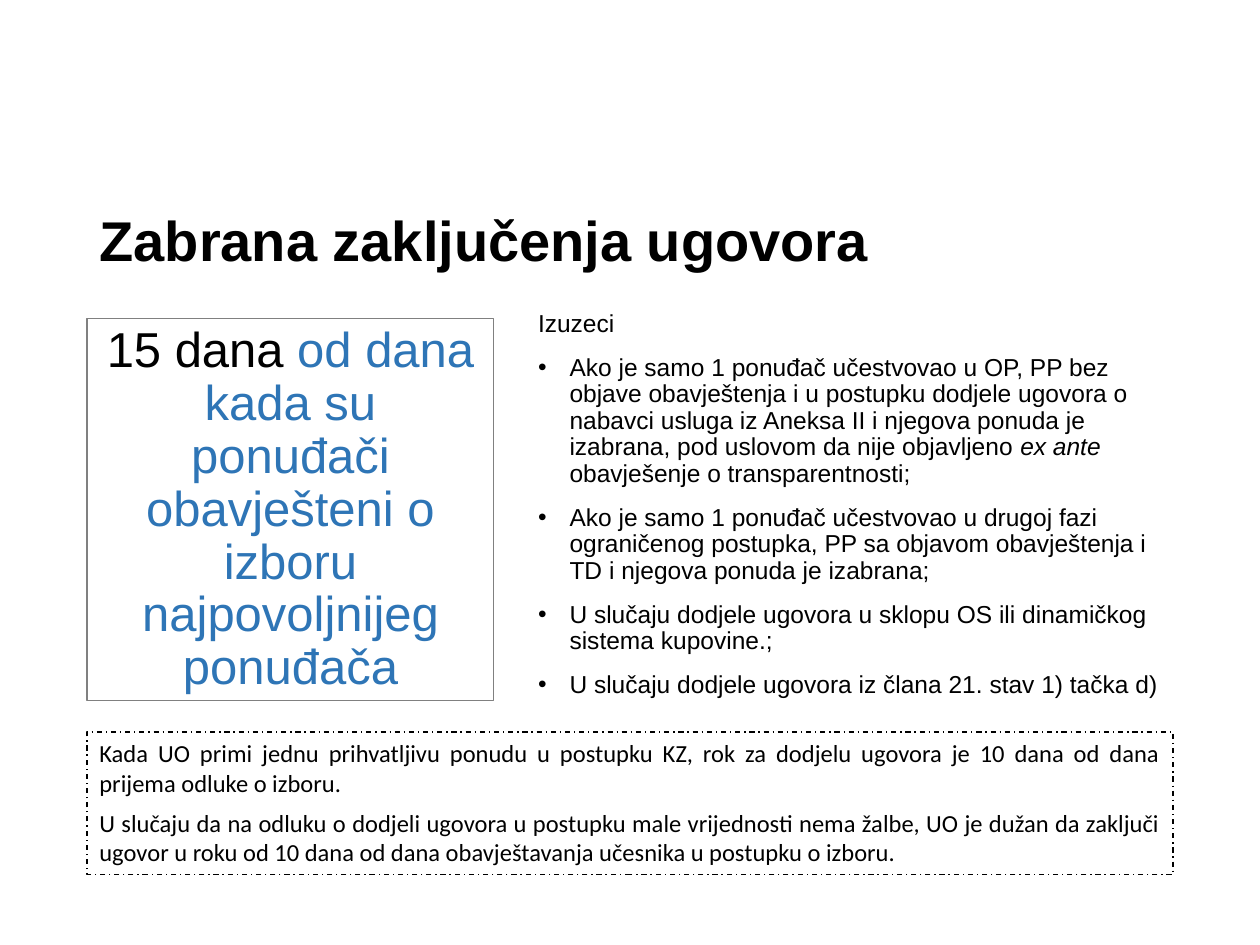
"""Build the slide on the ban on concluding a contract."""
from dataclasses import dataclass
from typing import Any, Optional

from lxml import etree
from pptx import Presentation, util as u
from pptx.dml.color import RGBColor
from pptx.enum import dml, shapes, text
from pptx.oxml.ns import qn


@dataclass(frozen=True)
class Theme:
    """Colours, fonts and type sizes."""
    ink: str = "000000"
    blue: str = "2E75B6"
    gray: str = "808080"
    sans: str = "Arial"
    note: str = "Calibri"
    title: int = 32
    lead: int = 28
    body: int = 14


@dataclass(frozen=True)
class Run:
    """A stretch of text with its own look."""
    words: str
    color: Optional[str] = None
    slant: bool = False


@dataclass(frozen=True)
class Para:
    """A paragraph of runs."""
    runs: tuple[Run, ...]
    bullet: bool = False


@dataclass(frozen=True)
class Style:
    """The type setting of a text block."""
    size: int
    font: str
    align: Any = text.PP_ALIGN.LEFT
    bold: bool = False
    gap: float = 0
    lead: float = 0.9
    anchor: Any = text.MSO_ANCHOR.TOP


@dataclass(frozen=True)
class Box:
    """A place on the slide, in inches."""
    left: float
    top: float
    width: float
    height: float


THEME = Theme()
LEFT = 0.69

TITLE = (Para((Run("Zabrana zaključenja ugovora"),)),)
CASES = (
    Para((Run("Izuzeci"),)),
    Para((
        Run("Ako je samo 1 ponuđač učestvovao u OP, PP bez objave obavještenja i u "
            "postupku dodjele ugovora o nabavci usluga iz Aneksa II i njegova ponuda "
            "je izabrana, pod uslovom da nije objavljeno "),
        Run("ex ante ", slant=True),
        Run("obavješenje o transparentnosti;"),
    ), True),
    Para((Run("Аko je samo 1 ponuđač učestvovao u drugoj fazi ograničenog postupka, "
              "PP sa objavom obavještenja i TD i njegova ponuda je izabrana;"),), True),
    Para((Run("U slučaju dodjele ugovora u sklopu OS ili dinamičkog sistema "
              "kupovine.;"),), True),
    Para((Run("U slučaju dodjele ugovora iz člana 21. stav 1) tačka d)"),), True),
)
TERM = (Para((
    Run("15 dana "),
    Run("od dana kada su ponuđači obavješteni o izboru najpovoljnijeg ponuđača",
        THEME.blue),
)),)
NOTES = (
    Para((Run("Kada UO primi jednu prihvatljivu ponudu u postupku KZ, rok za dodjelu "
              "ugovora je 10 dana od dana prijema odluke o izboru."),)),
    Para((Run("U slučaju da na odluku o dodjeli ugovora u postupku male vrijednosti "
              "nema žalbe, UO je dužan da zaključi ugovor u roku od 10 dana od dana "
              "obavještavanja učesnika u postupku o izboru."),)),
)


def place(shape: Any, box: Box) -> None:
    """Move and size a shape."""
    shape.left, shape.top = u.Inches(box.left), u.Inches(box.top)
    shape.width, shape.height = u.Inches(box.width), u.Inches(box.height)


def mark(para: Any, bullet: bool) -> None:
    """Set the bullet and the indent of a paragraph."""
    props = para._p.get_or_add_pPr()
    inset = u.Inches(0.25) if bullet else 0
    props.set("marL", str(inset))
    props.set("indent", str(-inset))
    if bullet:
        font = etree.SubElement(props, qn("a:buFont"))
        font.set("typeface", THEME.sans)
        etree.SubElement(props, qn("a:buChar")).set("char", "•")
    else:
        etree.SubElement(props, qn("a:buNone"))


def write(shape: Any, paras: tuple[Para, ...], style: Style) -> None:
    """Fill a shape with styled paragraphs."""
    frame = shape.text_frame
    frame.word_wrap = True
    frame.auto_size = text.MSO_AUTO_SIZE.NONE
    frame.vertical_anchor = style.anchor
    for at, item in enumerate(paras):
        para = frame.add_paragraph() if at else frame.paragraphs[0]
        mark(para, item.bullet)
        para.alignment = style.align
        para.line_spacing = style.lead
        para.space_before = u.Pt(style.gap if at else 0)
        para.font.size, para.font.name = u.Pt(style.size), style.font
        para.font.bold = style.bold
        para.font.color.rgb = RGBColor.from_string(THEME.ink)
        for part in item.runs:
            run = para.add_run()
            run.text = part.words
            if part.color:
                run.font.color.rgb = RGBColor.from_string(part.color)
            if part.slant:
                run.font.italic = True


def panel(slide: Any, box: Box, color: str, dash: Any = None) -> Any:
    """Add an unfilled outlined box."""
    shape = slide.shapes.add_shape(shapes.MSO_SHAPE.RECTANGLE, 0, 0, 0, 0)
    place(shape, box)
    shape.shadow.inherit = False
    shape.fill.background()
    shape.line.color.rgb = RGBColor.from_string(color)
    shape.line.width = u.Pt(0.75)
    if dash:
        shape.line.dash_style = dash
    return shape


def main() -> None:
    """Build and save the slide."""
    deck = Presentation()
    deck.slide_width, deck.slide_height = u.Inches(10), u.Inches(7.5)
    slide = deck.slides.add_slide(deck.slide_layouts[1])
    title, body = slide.placeholders
    place(title, Box(LEFT, 1.22, 7.4, 1))
    write(title, TITLE, Style(THEME.title, THEME.sans, bold=True,
                              anchor=text.MSO_ANCHOR.BOTTOM))
    place(body, Box(4.17, 2.42, 5.14, 4))
    write(body, CASES, Style(THEME.body, THEME.sans, gap=10))
    term = panel(slide, Box(LEFT, 2.53, 3.23, 3.03), THEME.gray)
    write(term, TERM, Style(THEME.lead, THEME.sans, text.PP_ALIGN.CENTER))
    note = panel(slide, Box(LEFT, 5.81, 8.62, 1.13), THEME.ink,
                 dml.MSO_LINE.DASH_DOT)
    write(note, NOTES, Style(THEME.body, THEME.note, text.PP_ALIGN.JUSTIFY,
                             gap=6, lead=1.0))
    deck.save("out.pptx")


if __name__ == "__main__":
    main()
